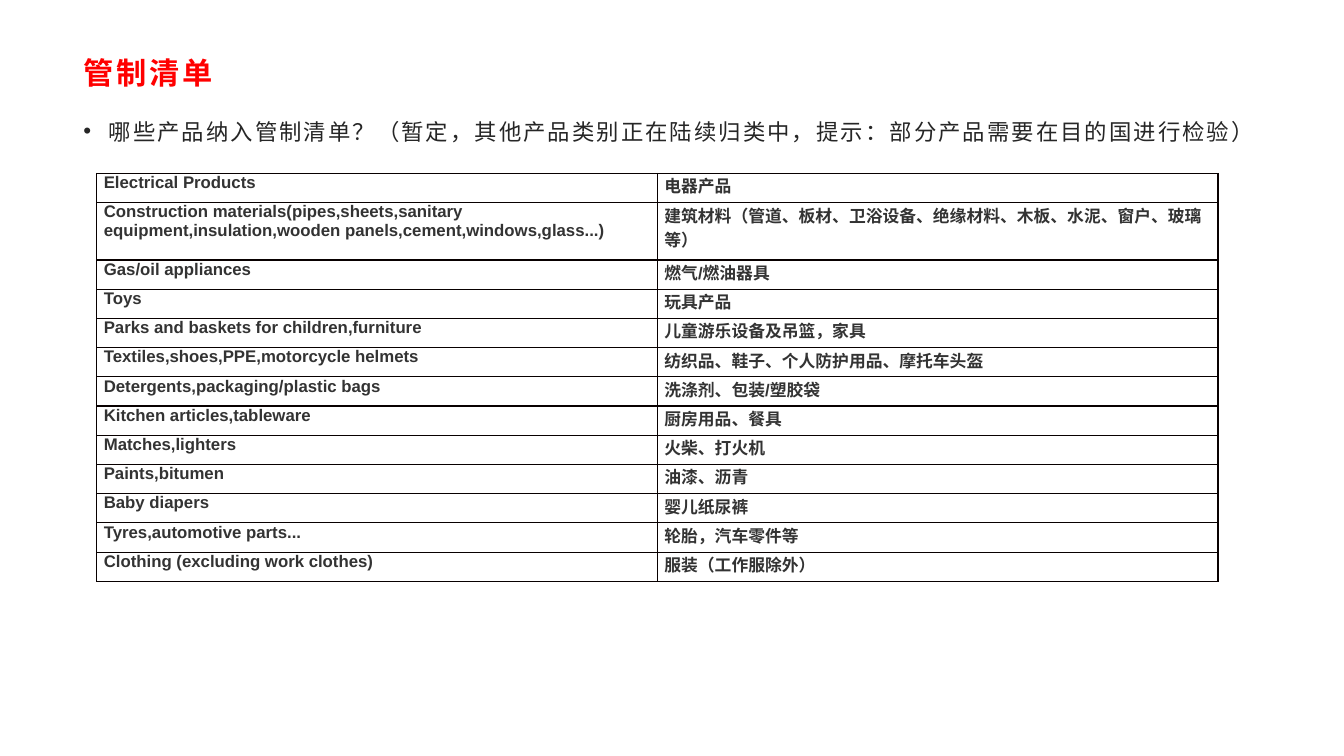
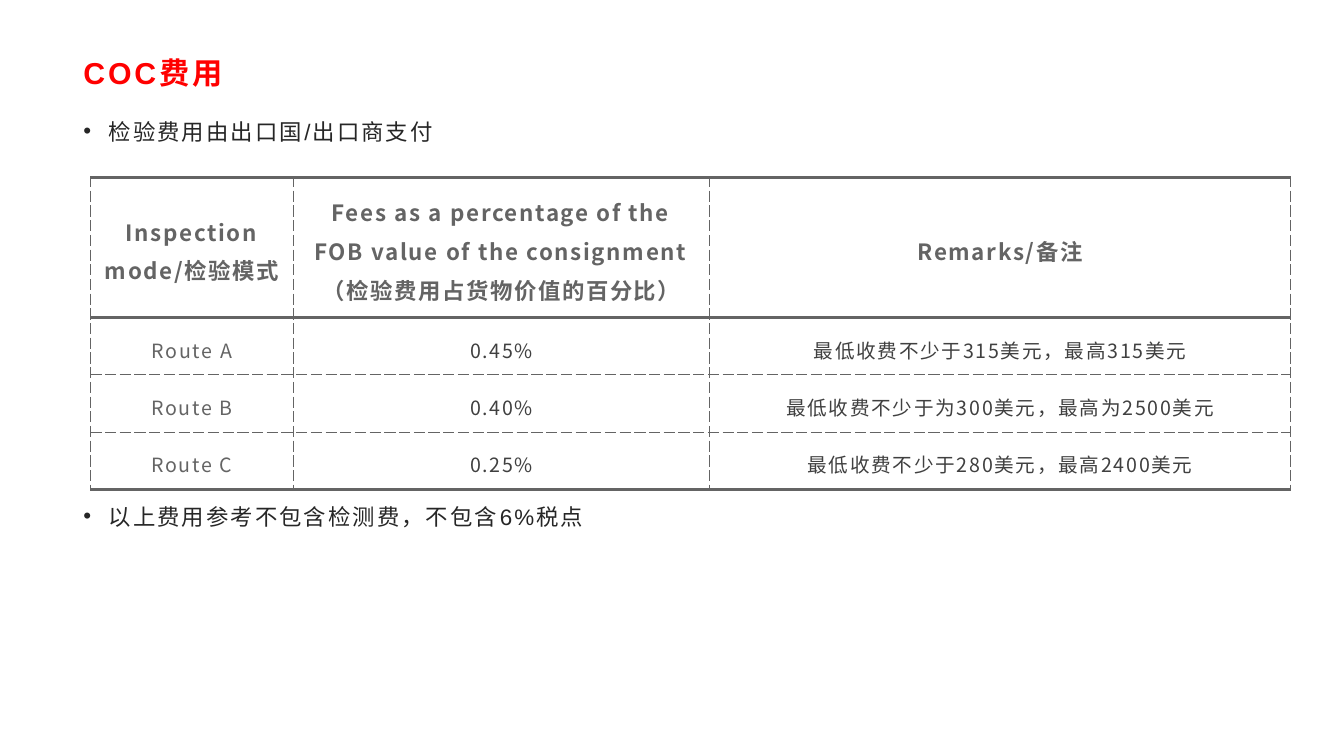
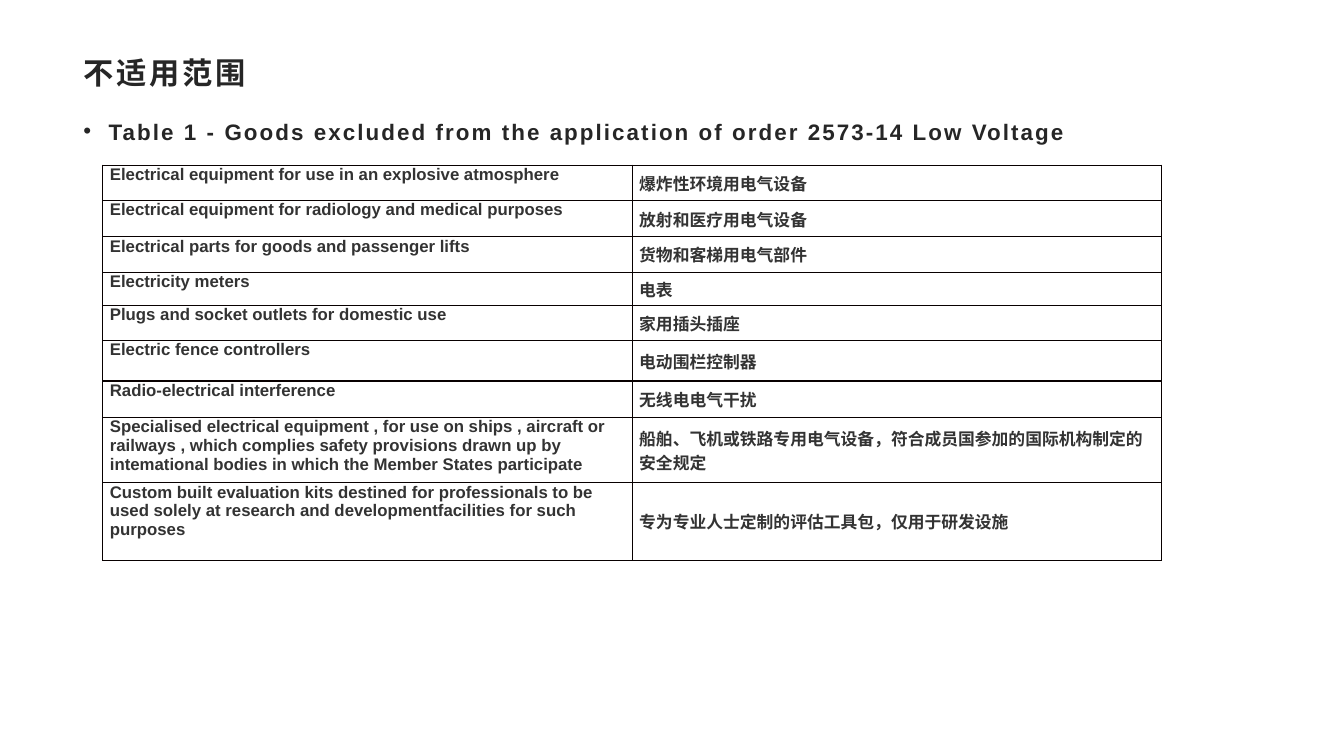
from dataclasses import dataclass

from lxml.etree import SubElement
from pptx import Presentation
from pptx.dml.color import RGBColor
from pptx.enum.text import MSO_ANCHOR as Anchor, PP_ALIGN as Align
from pptx.oxml.ns import qn
from pptx.util import Inches, Pt

RED, INK, GRAY, DARK = "FF0000", "262626", "646464", "404040"
CELL_INK, GRID, WHITE = "333333", "080000", "FFFFFF"
LATIN, CJK = "Arial", "Noto Sans CJK SC"


@dataclass(frozen=True)
class Style:
    size: float
    color: str
    bold: bool = False
    spacing: float = 0
    font: str = LATIN


@dataclass(frozen=True)
class Bullet:
    text: str
    bold: bool = False
    before: float = 0


@dataclass(frozen=True)
class Edge:
    color: str
    width: float
    dash: str = "solid"


@dataclass(frozen=True)
class Cell:
    text: str
    style: Style
    edges: dict[str, Edge]
    margins: tuple[float, float]
    anchor: Anchor = Anchor.TOP
    align: Align = Align.LEFT
    line_spacing: float = 1.0
    fill: str | None = None


@dataclass(frozen=True)
class Table:
    left: float
    top: float
    widths: list[float]
    heights: list[float]
    cells: list[list[Cell]]


@dataclass(frozen=True)
class Page:
    title: str
    title_color: str
    bullets: list[Bullet]
    table: Table


def rgb(value: str) -> RGBColor:
    return RGBColor.from_string(value)


def add_run(p, text: str, style: Style) -> None:
    r = p.add_run()
    r.text = text
    fmt = {"name": style.font, "size": Pt(style.size), "bold": style.bold}
    for key, value in fmt.items():
        setattr(r.font, key, value)
    r.font.color.rgb = rgb(style.color)
    rPr = r._r.get_or_add_rPr()
    rPr.set("spc", str(round(style.spacing * 100)))
    SubElement(rPr, qn("a:ea"), typeface=CJK)


def add_box(s, top: float, height: float, anchor: Anchor):
    tf = s.shapes.add_textbox(Inches(0.73), Inches(top), Inches(11.87), Inches(height)).text_frame
    fmt = {"word_wrap": True, "vertical_anchor": anchor}
    for key, value in fmt.items():
        setattr(tf, key, value)
    return tf


def add_title(s, text: str, color: str) -> None:
    tf = add_box(s, 0.48, 0.48, Anchor.MIDDLE)
    add_run(tf.paragraphs[0], text, Style(21.6, color, True, 2))


def add_bullets(s, bullets: list[Bullet]) -> None:
    tf = add_box(s, 1.04, 5.89, Anchor.TOP)
    for i, bullet in enumerate(bullets):
        p = tf.add_paragraph() if i else tf.paragraphs[0]
        fmt = {"line_spacing": 1.3, "space_before": Pt(bullet.before), "space_after": Pt(10)}
        for key, value in fmt.items():
            setattr(p, key, value)
        pPr = p._p.get_or_add_pPr()
        pPr.set("marL", str(Inches(0.25)))
        pPr.set("indent", str(Inches(-0.25)))
        SubElement(pPr, qn("a:buFont"), typeface=LATIN)
        SubElement(pPr, qn("a:buChar"), char="•")
        add_run(p, bullet.text, Style(16, INK, bullet.bold, 1.5))


def set_edges(cell, edges: dict[str, Edge]) -> None:
    tcPr = cell._tc.get_or_add_tcPr()
    for side in "LRTB":
        edge = edges[side]
        ln = SubElement(tcPr, qn(f"a:ln{side}"), w=str(Pt(edge.width)))
        fill = SubElement(ln, qn("a:solidFill"))
        SubElement(fill, qn("a:srgbClr"), val=edge.color)
        SubElement(ln, qn("a:prstDash"), val=edge.dash)


def fill_cell(cell, data: Cell) -> None:
    set_edges(cell, data.edges)
    if data.fill:
        cell.fill.solid()
        cell.fill.fore_color.rgb = rgb(data.fill)
    else:
        cell.fill.background()
    across, down = map(Inches, data.margins)
    fmt = {"margin_left": across, "margin_right": across, "margin_top": down,
           "margin_bottom": down, "vertical_anchor": data.anchor}
    for key, value in fmt.items():
        setattr(cell, key, value)
    p = cell.text_frame.paragraphs[0]
    p.alignment = data.align
    p.line_spacing = data.line_spacing
    add_run(p, data.text, data.style)


def add_table(s, table: Table) -> None:
    tbl = s.shapes.add_table(
        len(table.heights), len(table.widths), Inches(table.left), Inches(table.top),
        Inches(sum(table.widths)), Inches(sum(table.heights))).table
    tbl.first_row = tbl.horz_banding = False
    for col, width in zip(tbl.columns, table.widths):
        col.width = Inches(width)
    for row, height, cells in zip(tbl.rows, table.heights, table.cells):
        row.height = Inches(height)
        for cell, data in zip(row.cells, cells):
            fill_cell(cell, data)


def goods_cells(rows: list[tuple[str, str]], chinese_anchor: Anchor) -> list[list[Cell]]:
    edges = dict.fromkeys("LRTB", Edge(GRID, 1))
    style = Style(12, CELL_INK, True)
    return [[Cell(text, style, edges, (0.07, 0), anchor)
             for text, anchor in zip(row, (Anchor.TOP, chinese_anchor))] for row in rows]


def fee_cells(rows: list[tuple[str, str, str]]) -> list[list[Cell]]:
    thick, dashed = Edge(GRAY, 2.25), Edge(GRAY, 0.75, "sysDash")
    last = len(rows) - 1
    cells = []
    for i, row in enumerate(rows):
        edges = {"L": dashed, "R": dashed, "T": thick if i < 2 else dashed,
                 "B": thick if i in (0, last) else dashed}
        header = i == 0
        cells.append([
            Cell(text, Style(16 if header else 14, GRAY if header or j == 0 else DARK,
                             header, 1.2, CJK),
                 edges, (0.14, 0.12), Anchor.MIDDLE, Align.CENTER, 1.2, WHITE)
            for j, text in enumerate(row)])
    return cells


CONTROLLED = [
    ("Electrical Products", "电器产品"),
    ("Construction materials(pipes,sheets,sanitary equipment,insulation,wooden panels,"
     "cement,windows,glass...)",
     "建筑材料（管道、板材、卫浴设备、绝缘材料、木板、水泥、窗户、玻璃等）"),
    ("Gas/oil appliances", "燃气/燃油器具"),
    ("Toys", "玩具产品"),
    ("Parks and baskets for children,furniture", "儿童游乐设备及吊篮，家具"),
    ("Textiles,shoes,PPE,motorcycle helmets", "纺织品、鞋子、个人防护用品、摩托车头盔"),
    ("Detergents,packaging/plastic bags", "洗涤剂、包装/塑胶袋"),
    ("Kitchen articles,tableware", "厨房用品、餐具"),
    ("Matches,lighters", "火柴、打火机"),
    ("Paints,bitumen", "油漆、沥青"),
    ("Baby diapers", "婴儿纸尿裤"),
    ("Tyres,automotive parts...", "轮胎，汽车零件等"),
    ("Clothing (excluding work clothes)", "服装（工作服除外）"),
]

FEES = [
    ("Inspection mode/检验模式",
     "Fees as a percentage of the FOB value of the consignment（检验费用占货物价值的百分比）",
     "Remarks/备注"),
    ("Route A", "0.45%", "最低收费不少于315美元，最高315美元"),
    ("Route B", "0.40%", "最低收费不少于为300美元，最高为2500美元"),
    ("Route C", "0.25%", "最低收费不少于280美元，最高2400美元"),
]

EXCLUDED = [
    ("Electrical equipment for use in an explosive atmosphere", "爆炸性环境用电气设备"),
    ("Electrical equipment for radiology and medical purposes", "放射和医疗用电气设备"),
    ("Electrical parts for goods and passenger lifts", "货物和客梯用电气部件"),
    ("Electricity meters", "电表"),
    ("Plugs and socket outlets for domestic use", "家用插头插座"),
    ("Electric fence controllers", "电动围栏控制器"),
    ("Radio-electrical interference", "无线电电气干扰"),
    ("Specialised electrical equipment , for use on ships , aircraft or railways , "
     "which complies safety provisions drawn up by intemational bodies in which the "
     "Member States participate",
     "船舶、飞机或铁路专用电气设备，符合成员国参加的国际机构制定的安全规定"),
    ("Custom built evaluation kits destined for professionals to be used solely at "
     "research and developmentfacilities for such purposes",
     "专为专业人士定制的评估工具包，仅用于研发设施"),
]

PAGES = [
    Page("管制清单", RED,
         [Bullet("哪些产品纳入管制清单？（暂定，其他产品类别正在陆续归类中，"
                 "提示：部分产品需要在目的国进行检验）")],
         Table(0.96, 1.72, [5.56] * 2, [0.29, 0.57] + [0.29] * 11,
               goods_cells(CONTROLLED, Anchor.TOP))),
    Page("COC费用", RED,
         [Bullet("检验费用由出口国/出口商支付"),
          Bullet("以上费用参考不包含检测费，不包含6%税点", before=240)],
         Table(0.9, 1.76, [2.01, 4.13, 5.76], [1.39] + [0.57] * 3, fee_cells(FEES))),
    Page("不适用范围", INK,
         [Bullet("Table 1 - Goods excluded from the application of order 2573-14 Low Voltage",
                 bold=True)],
         Table(1.02, 1.64, [5.25] * 2,
               [0.35, 0.36, 0.35, 0.33, 0.35, 0.4, 0.36, 0.65, 0.77],
               goods_cells(EXCLUDED, Anchor.MIDDLE))),
]


def main() -> None:
    prs = Presentation()
    prs.slide_width, prs.slide_height = Inches(13.33), Inches(7.5)
    for page in PAGES:
        s = prs.slides.add_slide(prs.slide_layouts[6])
        add_title(s, page.title, page.title_color)
        add_bullets(s, page.bullets)
        add_table(s, page.table)
    prs.save("out.pptx")


if __name__ == "__main__":
    main()
